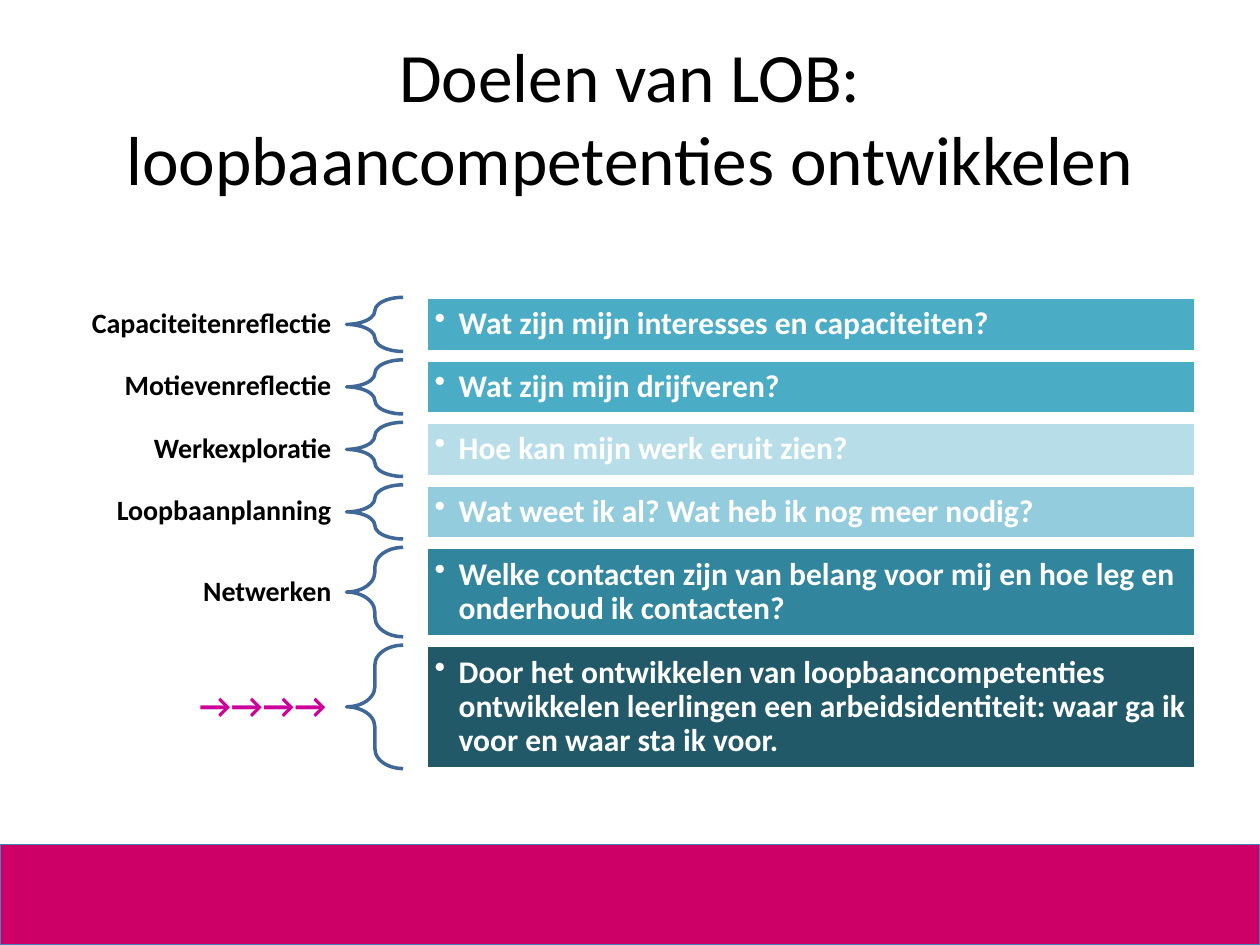
from lxml.etree import SubElement
from pptx import Presentation
from pptx.dml.color import RGBColor
from pptx.enum.shapes import MSO_SHAPE
from pptx.enum.text import MSO_ANCHOR, PP_ALIGN
from pptx.oxml.ns import qn
from pptx.util import Inches, Pt

TITLE = "Doelen van LOB:\vloopbaancompetenties ontwikkelen"
PINK, BLUE, WHITE, BLACK = "CC0066", "3F6797", "FFFFFF", "000000"
SMALL = dict(size=16, color=BLACK, pad=(0.12, 0.04))
LARGE = dict(size=20, color="CC0099", pad=(0.16, 0.06))
ROWS = [
    ("Capaciteitenreflectie", "Wat zijn mijn interesses en capaciteiten?", "4BACC6", 0.43, SMALL),
    ("Motievenreflectie", "Wat zijn mijn drijfveren?", "4BACC6", 0.43, SMALL),
    ("Werkexploratie", "Hoe kan mijn werk eruit zien?", "B7DEE8", 0.43, SMALL),
    ("Loopbaanplanning", "Wat weet ik al? Wat heb ik nog meer nodig?", "93CDDD", 0.43, SMALL),
    ("Netwerken", "Welke contacten zijn van belang voor mij en hoe leg en "
     "onderhoud ik contacten?", "31859C", 0.71, SMALL),
    ("→→→→", "Door het ontwikkelen van loopbaancompetenties ontwikkelen leerlingen "
     "een arbeidsidentiteit: waar ga ik voor en waar sta ik voor.", "215968", 0.98, LARGE),
]
TOP, END = 2.36, 6.1
GAP = (END - TOP - sum(row[3] for row in ROWS)) / (len(ROWS) - 1)

deck = Presentation()
deck.slide_width, deck.slide_height = Inches(10), Inches(7.5)
slide = deck.slides.add_slide(deck.slide_layouts[6])


def tint(code):
    return RGBColor.from_string(code)


def draw(kind, box, fill=None, line=WHITE, width=2):
    shape = slide.shapes.add_shape(kind, *map(Inches, box))
    shape.shadow.inherit = False
    if fill:
        shape.fill.solid()
        shape.fill.fore_color.rgb = tint(fill)
    else:
        shape.fill.background()
    shape.line.color.rgb = tint(line)
    shape.line.width = Pt(width)
    return shape


def write(text, box=None, shape=None, size=18, color=WHITE, bold=True,
          align=PP_ALIGN.LEFT, pad=(0.07, 0.07), space=0.9, bullet=False):
    shape = shape or slide.shapes.add_textbox(*map(Inches, box))
    frame = shape.text_frame
    frame.word_wrap = True
    frame.vertical_anchor = MSO_ANCHOR.MIDDLE
    frame.margin_left = frame.margin_right = Inches(pad[0])
    frame.margin_top = frame.margin_bottom = Inches(pad[1])
    para = frame.paragraphs[0]
    para.text = text
    para.alignment = align
    para.line_spacing = space
    if bullet:
        props = para._p.get_or_add_pPr()
        props.set("marL", str(Inches(0.19)))
        props.set("indent", str(-Inches(0.19)))
        SubElement(props, qn("a:buChar"), char="•")
    for run in para.runs:
        run.font.name = "Calibri"
        run.font.size = Pt(size)
        run.font.bold = bold
        run.font.color.rgb = tint(color)


draw(MSO_SHAPE.RECTANGLE, (0, 6.7, 10, 0.8), fill=PINK, line="4B7EBC", width=0.75)
write(TITLE, (0.5, 0.3, 9, 1.25), size=39.6, color=BLACK, bold=False,
      align=PP_ALIGN.CENTER, pad=(0.1, 0.05), space=1.0)

top = TOP
for label, goal, fill, high, style in ROWS:
    write(label, (0.5, top, 2.25, high), align=PP_ALIGN.RIGHT, **style)
    brace = draw(MSO_SHAPE.LEFT_BRACE, (2.75, top, 0.45, high), line=BLUE)
    brace.adjustments[0] = 0.35
    bar = draw(MSO_SHAPE.RECTANGLE, (3.38, top, 6.11, high), fill=fill)
    write(goal, shape=bar, bullet=True)
    top += high + GAP

deck.save("out.pptx")
